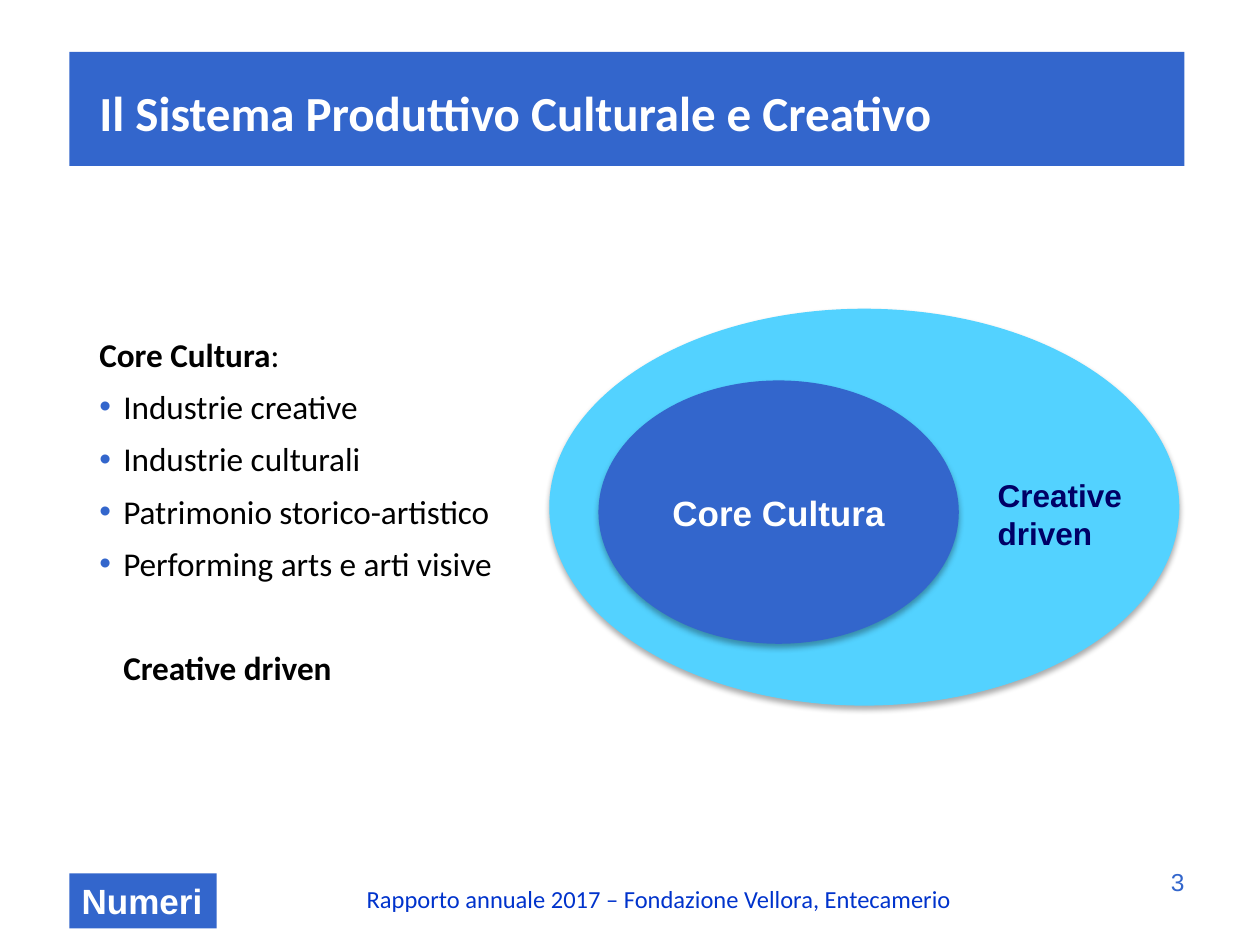
from lxml import etree
from pptx import Presentation
from pptx.dml.color import RGBColor
from pptx.enum.shapes import MSO_SHAPE
from pptx.enum.text import MSO_ANCHOR, PP_ALIGN
from pptx.oxml.ns import qn
from pptx.util import Pt

RECT, OVAL = MSO_SHAPE.RECTANGLE, MSO_SHAPE.OVAL
LEFT, MID, RIGHT = PP_ALIGN.LEFT, PP_ALIGN.CENTER, PP_ALIGN.RIGHT
TOP, CENTER = MSO_ANCHOR.TOP, MSO_ANCHOR.MIDDLE

BLUE = RGBColor(0x33, 0x66, 0xCC)
SKY = RGBColor(0x53, 0xD2, 0xFF)
NAVY = RGBColor(0x00, 0x00, 0x66)
ROYAL = RGBColor(0x00, 0x33, 0xCC)
WHITE = RGBColor(0xFF, 0xFF, 0xFF)
BLACK = RGBColor(0, 0, 0)
HEAD, BODY = "Arial", "Calibri"
INDENT = 13.7


def write(par, text, size=19, font=BODY, color=BLACK, bold=False, align=LEFT):
    par.alignment = align
    run = par.add_run()
    run.text = text
    run.font.size, run.font.name, run.font.bold = Pt(size), font, bold
    run.font.color.rgb = color


def indent(par, bullet=None):
    props = par._p.get_or_add_pPr()
    props.set("marL", str(Pt(INDENT)))
    props.set("indent", str(-Pt(INDENT) if bullet else 0))
    if bullet:
        tint = etree.SubElement(props, qn("a:buClr"))
        etree.SubElement(tint, qn("a:srgbClr"), val=str(BLUE))
        etree.SubElement(props, qn("a:buFont"), typeface=HEAD)
        etree.SubElement(props, qn("a:buChar"), char=bullet)


class Page:
    def __init__(self, deck):
        self.slide = deck.slides.add_slide(deck.slide_layouts[6])

    def shape(self, kind, box, fill, shadow=False):
        item = self.slide.shapes.add_shape(kind, *map(Pt, box))
        item.fill.solid()
        item.fill.fore_color.rgb = fill
        item.line.fill.background()
        item.shadow.inherit = False
        if shadow:
            effects = item._element.spPr.find(qn("a:effectLst"))
            drop = etree.SubElement(
                effects, qn("a:outerShdw"), blurRad=str(Pt(3.5)),
                dist=str(Pt(2.2)), dir="5400000", rotWithShape="0")
            tint = etree.SubElement(drop, qn("a:srgbClr"), val=str(BLACK))
            etree.SubElement(tint, qn("a:alpha"), val="32000")
        return item

    def fill_text(self, item, lines, wrap=True, anchor=TOP, **style):
        frame = item.text_frame
        frame.word_wrap, frame.vertical_anchor = wrap, anchor
        for i, line in enumerate(lines):
            par = frame.add_paragraph() if i else frame.paragraphs[0]
            write(par, line, **style)
        return frame

    def text(self, box, *lines, **style):
        item = self.slide.shapes.add_textbox(*map(Pt, box))
        return self.fill_text(item, lines, **style)


def main():
    deck = Presentation()
    deck.slide_width, deck.slide_height = Pt(720), Pt(540)
    page = Page(deck)

    # Title band
    page.shape(RECT, (39.6, 29.7, 637.2, 65.2), BLUE)
    page.text((49.7, 43.5, 496.8, 41), "Il Sistema Produttivo Culturale e Creativo",
              wrap=False, size=28, color=WHITE, bold=True)

    # Sector list
    frame = page.text((49.7, 187.6, 247.7, 211), "Core Cultura", bold=True)
    write(frame.paragraphs[0], ":")
    for name in ("Industrie creative", "Industrie culturali",
                 "Patrimonio storico-artistico", "Performing arts e arti visive"):
        par = frame.add_paragraph()
        par.space_before = Pt(7)
        indent(par, "•")
        write(par, name)
    par = frame.add_paragraph()
    par.space_before = Pt(37)
    indent(par)
    write(par, "Creative driven", bold=True)

    # Nested ellipses
    page.shape(OVAL, (313.9, 176.4, 360, 226.8), SKY, shadow=True)
    core = page.shape(OVAL, (342, 217.4, 205.9, 150.5), BLUE, shadow=True)
    page.fill_text(core, ["Core Cultura"], anchor=CENTER, size=20, font=HEAD,
                   color=WHITE, bold=True, align=MID)
    page.text((563, 268.6, 86.4, 51), "Creative", "driven", wrap=False,
              size=18, font=HEAD, color=NAVY, bold=True)

    # Footer
    tag = page.shape(RECT, (39.6, 499, 84.2, 31.5), BLUE)
    page.fill_text(tag, ["Numeri"], wrap=False, size=20, font=HEAD,
                   color=WHITE, bold=True)
    page.text((516.2, 491.8, 167.8, 37.4), "3", size=14, font=HEAD,
              color=BLUE, align=RIGHT)
    page.text((139, 501.8, 475.2, 24.5),
              "Rapporto annuale 2017 – Fondazione Vellora, Entecamerio",
              size=14, color=ROYAL, align=MID)

    deck.save("out.pptx")


if __name__ == "__main__":
    main()
